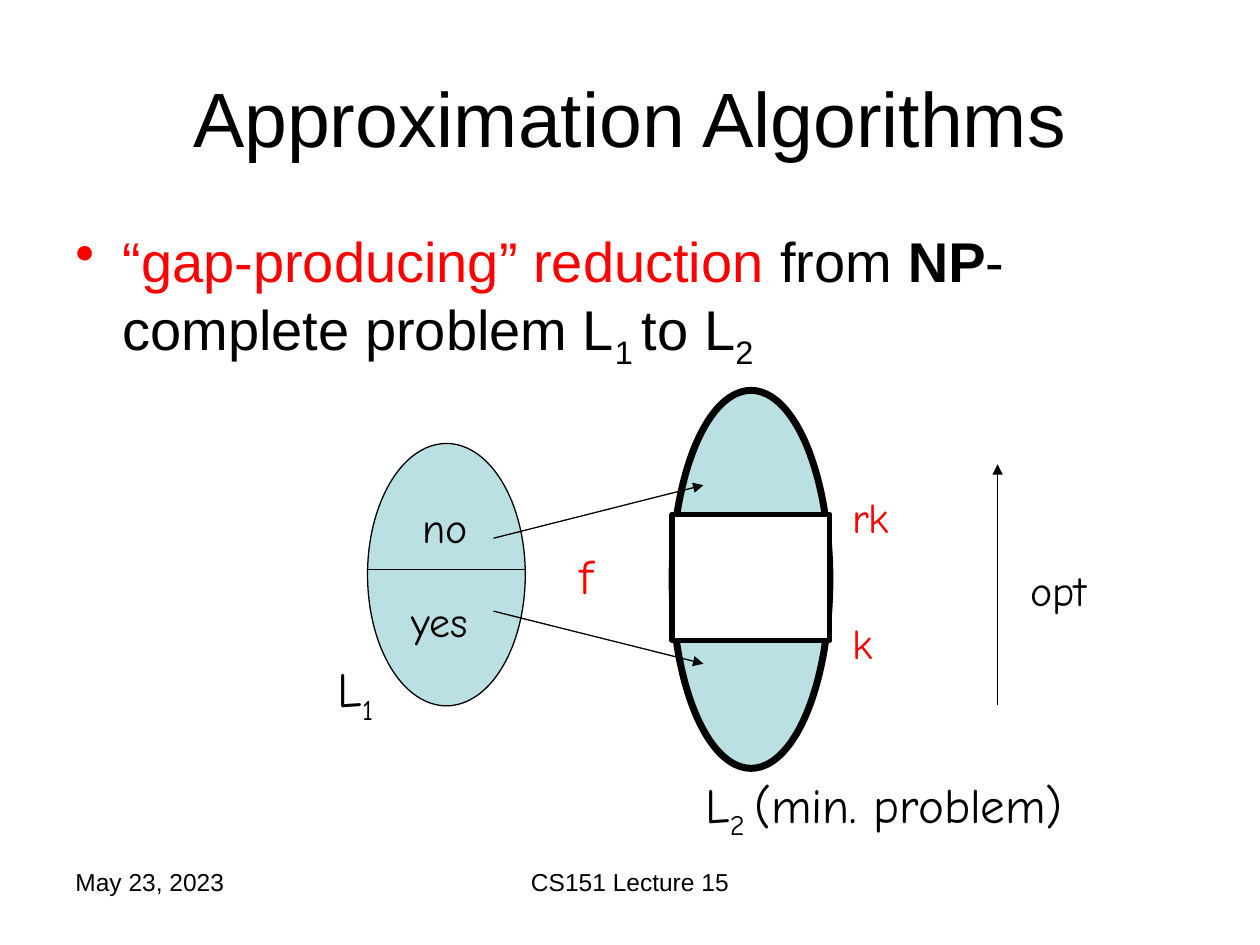
from dataclasses import dataclass

from lxml.etree import SubElement
from pptx import Presentation
from pptx.dml.color import RGBColor
from pptx.enum.shapes import MSO_CONNECTOR as Connector, MSO_SHAPE as Shape
from pptx.enum.text import MSO_ANCHOR as Anchor, PP_ALIGN as Align
from pptx.oxml.ns import qn
from pptx.slide import Slide
from pptx.util import Cm, Pt

BLACK = RGBColor(0, 0, 0)
WHITE = RGBColor(255, 255, 255)
RED = RGBColor(255, 0, 0)
TEAL = RGBColor(0xBB, 0xE0, 0xE3)


@dataclass
class Board:
    """Draws the elements of one slide in a shared style."""

    page: Slide
    font: str = "Arial"
    hand: str = "Comic Neue"
    thin: float = 0.75

    def text(self, place, spans, size, font=None, color=BLACK, align=Align.LEFT, anchor=Anchor.TOP):
        box = self.page.shapes.add_textbox(*map(Cm, place))
        frame = box.text_frame
        frame.word_wrap = True
        frame.vertical_anchor = anchor
        para = frame.paragraphs[0]
        para.alignment = align
        para.font.name = font or self.font
        para.font.size = Pt(size)
        para.font.color.rgb = color
        for words, *style in spans:
            span = para.add_run()
            span.text = words
            if "sub" in style:
                span._r.get_or_add_rPr().set("baseline", "-25000")
            if "bold" in style:
                span.font.bold = True
            if "red" in style:
                span.font.color.rgb = RED
        return para

    def bullet(self, place, spans, size):
        props = self.text(place, spans, size)._p.get_or_add_pPr()
        props.set("marL", str(Cm(0.95)))
        props.set("indent", str(Cm(-0.95)))
        mark = props.makeelement(qn("a:buChar"), {"char": "•"})
        props.insert(0, mark)

    def label(self, place, words, size=24, color=BLACK, index=None, rest=""):
        spans = [(words,)]
        if index:
            spans.append((index, "sub"))
        if rest:
            spans.append((rest,))
        self.text(place, spans, size, self.hand, color)

    def shape(self, kind, place, fill, width):
        shape = self.page.shapes.add_shape(kind, *map(Cm, place))
        shape.shadow.inherit = False
        shape.fill.solid()
        shape.fill.fore_color.rgb = fill
        shape.line.color.rgb = BLACK
        shape.line.width = Pt(width)

    def line(self, start, end, arrow=False):
        line = self.page.shapes.add_connector(Connector.STRAIGHT, *map(Cm, (*start, *end)))
        line.line.color.rgb = BLACK
        line.line.width = Pt(self.thin)
        if arrow:
            SubElement(line.line._get_or_add_ln(), qn("a:tailEnd"), type="triangle")
        SubElement(line._element.spPr, qn("a:effectLst"))


def main():
    deck = Presentation()
    deck.slide_width, deck.slide_height = Cm(25.4), Cm(19.05)
    board = Board(deck.slides.add_slide(deck.slide_layouts[6]))

    board.text((1.27, 17.35, 5.92, 1.32), [("May 23, 2023",)], 14)
    board.text((1.27, 0.76, 22.86, 3.18), [("Approximation Algorithms",)], 44,
               align=Align.CENTER, anchor=Anchor.MIDDLE)
    board.bullet((1.27, 4.45, 22.86, 12.57), [
        ("“gap-producing” reduction", "red"), (" from ",), ("NP", "bold"),
        ("-complete problem L",), ("1 ", "sub"), ("to L",), ("2", "sub")], 32)

    board.shape(Shape.OVAL, (7.41, 8.94, 3.18, 5.29), TEAL, board.thin)
    board.line((7.41, 11.48), (10.59, 11.48))
    board.label((8.26, 9.98, 1.91, 1.27), "no")
    board.label((8.04, 11.89, 1.91, 1.27), "yes")
    board.label((6.56, 13.16, 1.91, 1.45), "L", 28, index="1")

    board.shape(Shape.OVAL, (13.55, 7.87, 3.18, 7.62), TEAL, 4)
    board.label((13.97, 15.49, 8.47, 1.45), "L", 28, index="2 ", rest="(min. problem)")

    for start, end in ((10.85, 9.78), (12.32, 13.38)):
        board.line((9.95, start), (14.18, end), arrow=True)
    board.label((11.43, 10.87, 1.91, 1.45), "f", 28, RED)

    board.label((20.53, 11.25, 2.96, 1.27), "opt")
    board.line((20.11, 14.22), (20.11, 9.36), arrow=True)
    for words, top in (("k", 12.32), ("rk", 9.78)):
        board.label((16.93, top, 1.7, 1.27), words, color=RED)
    board.shape(Shape.RECTANGLE, (13.55, 10.37, 3.18, 2.54), WHITE, 3)

    board.text((8.68, 17.35, 8.04, 1.32), [("CS151 Lecture 15",)], 14, align=Align.CENTER)
    deck.save("out.pptx")


if __name__ == "__main__":
    main()
